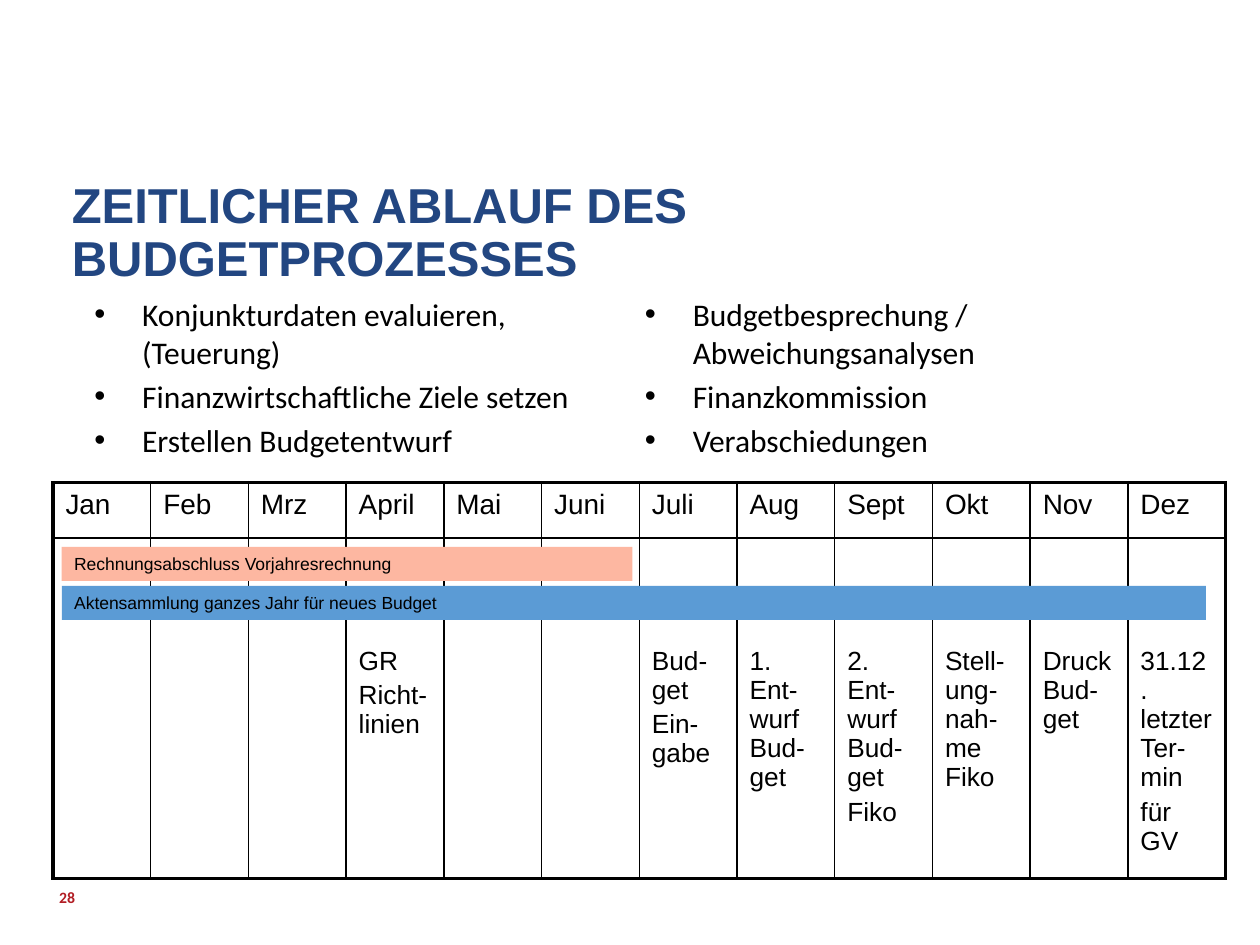
from pptx import Presentation
from pptx.dml.color import RGBColor
from pptx.enum.shapes import MSO_SHAPE
from pptx.enum.text import MSO_ANCHOR, MSO_AUTO_SIZE, PP_ALIGN
from pptx.oxml.ns import qn
from pptx.util import Inches, Pt
from lxml.etree import SubElement

THEME = {
    "heading_font": "Arial", "body_font": "Calibri",
    "title": "224681", "text": "000000", "number": "B21D24", "grid": "000000",
    "white": "FFFFFF", "closing": "FDB7A1", "collection": "5B9BD5",
    "title_size": 28, "bullet_size": 18, "month_size": 16, "task_size": 15,
    "bar_size": 10, "number_size": 9, "outer_line": 2.25, "inner_line": 1,
}
TITLE = "ZEITLICHER ABLAUF DES BUDGETPROZESSES"
PAGE_NUMBER = "28"
BULLET_COLUMNS = [
    (0.65, ["Konjunkturdaten evaluieren, (Teuerung)",
            "Finanzwirtschaftliche Ziele setzen",
            "Erstellen Budgetentwurf"]),
    (5.02, ["Budgetbesprechung / Abweichungsanalysen",
            "Finanzkommission",
            "Verabschiedungen"]),
]
MONTHS = [
    ("Jan", []), ("Feb", []), ("Mrz", []),
    ("April", ["GR", "Richt-linien"]),
    ("Mai", []), ("Juni", []),
    ("Juli", ["Bud-get", "Ein-gabe"]),
    ("Aug", ["1. Ent-wurf Bud-get"]),
    ("Sept", ["2. Ent-wurf Bud-get", "Fiko"]),
    ("Okt", ["Stell-ung-nah-me Fiko"]),
    ("Nov", ["Druck Bud-get"]),
    ("Dez", ["31.12. letzter Ter-min", "für GV"]),
]
BARS = [
    ("Aktensammlung ganzes Jahr für neues Budget", 4.65, 9.08, "collection"),
    ("Rechnungsabschluss Vorjahresrechnung", 4.34, 4.53, "closing"),
]
TABLE_LEFT, TABLE_TOP, TABLE_WIDTH = 0.42, 3.83, 9.31
ROW_HEIGHTS = [0.44, 2.63]
TASK_TOP_MARGIN = 0.86
FIRST_FILLED_COLUMN = 8


def color(name):
    return RGBColor.from_string(THEME[name])


def write(text_frame, lines, size, font="heading_font", ink="text", bold=False, bullets=False):
    text_frame.text = "\n".join(lines)
    for index, paragraph in enumerate(text_frame.paragraphs):
        paragraph.alignment = PP_ALIGN.LEFT
        if index:
            paragraph.space_before = Pt(THEME[size] * 0.2)
        if bullets:
            properties = paragraph._p.get_or_add_pPr()
            properties.set("marL", str(Inches(0.38)))
            properties.set("indent", str(-Inches(0.38)))
            SubElement(properties, qn("a:buFont")).set("typeface", "Arial")
            SubElement(properties, qn("a:buChar")).set("char", "•")
        for run in paragraph.runs:
            run.font.name = THEME[font]
            run.font.size = Pt(THEME[size])
            run.font.bold = bold
            run.font.color.rgb = color(ink)


def add_border(cell, side, width):
    line = SubElement(cell._tc.get_or_add_tcPr(), qn(f"a:ln{side}"), w=str(Pt(width)))
    fill = SubElement(line, qn("a:solidFill"))
    SubElement(fill, qn("a:srgbClr")).set("val", THEME["grid"])


def add_title(slide):
    title = slide.shapes.title
    title.left, title.top = Inches(0.47), Inches(1.39)
    title.width, title.height = Inches(9.17), Inches(0.94)
    frame = title.text_frame
    write(frame, [TITLE], "title_size", ink="title", bold=True)
    frame.paragraphs[0].line_spacing = 0.9
    frame.vertical_anchor = MSO_ANCHOR.MIDDLE
    frame.auto_size = MSO_AUTO_SIZE.NONE


def add_bullets(slide, left, lines):
    box = slide.shapes.add_textbox(Inches(left), Inches(2.29), Inches(4.46), Inches(1.46))
    box.text_frame.word_wrap = True
    write(box.text_frame, lines, "bullet_size", font="body_font", bullets=True)


def add_calendar(slide):
    last_row, last_column = len(ROW_HEIGHTS) - 1, len(MONTHS) - 1
    table = slide.shapes.add_table(
        len(ROW_HEIGHTS), len(MONTHS), Inches(TABLE_LEFT), Inches(TABLE_TOP),
        Inches(TABLE_WIDTH), Inches(sum(ROW_HEIGHTS))).table
    table.first_row = table.horz_banding = False
    for row, height in zip(table.rows, ROW_HEIGHTS):
        row.height = Inches(height)
    for column_index, (month, tasks) in enumerate(MONTHS):
        table.columns[column_index].width = Inches(TABLE_WIDTH / len(MONTHS))
        for row_index, lines in enumerate([[month], tasks]):
            cell = table.cell(row_index, column_index)
            edges = {"L": column_index == 0, "R": column_index == last_column,
                     "T": row_index == 0, "B": row_index == last_row}
            for side, is_outer in edges.items():
                add_border(cell, side, THEME["outer_line" if is_outer else "inner_line"])
            if column_index >= FIRST_FILLED_COLUMN:
                cell.fill.solid()
                cell.fill.fore_color.rgb = color("white")
            else:
                cell.fill.background()
            if lines:
                write(cell.text_frame, lines, "task_size" if row_index else "month_size")
            if row_index:
                cell.margin_top = Inches(TASK_TOP_MARGIN)


def add_bar(slide, label, top, width, fill):
    bar = slide.shapes.add_shape(
        MSO_SHAPE.RECTANGLE, Inches(0.49), Inches(top), Inches(width), Inches(0.27))
    bar.shadow.inherit = False
    bar.fill.solid()
    bar.fill.fore_color.rgb = color(fill)
    bar.line.fill.background()
    bar.text_frame.vertical_anchor = MSO_ANCHOR.MIDDLE
    write(bar.text_frame, [label], "bar_size")


def add_page_number(slide):
    box = slide.shapes.add_textbox(Inches(0.47), Inches(6.92), Inches(2.25), Inches(0.4))
    frame = box.text_frame
    frame.word_wrap = True
    frame.margin_left = frame.margin_right = frame.margin_top = frame.margin_bottom = 0
    frame.vertical_anchor = MSO_ANCHOR.MIDDLE
    write(frame, [PAGE_NUMBER], "number_size", font="body_font", ink="number", bold=True)


def main():
    presentation = Presentation()
    presentation.slide_width, presentation.slide_height = Inches(10), Inches(7.5)
    slide = presentation.slides.add_slide(presentation.slide_layouts[5])
    add_title(slide)
    add_page_number(slide)
    for left, lines in BULLET_COLUMNS:
        add_bullets(slide, left, lines)
    add_calendar(slide)
    for bar in BARS:
        add_bar(slide, *bar)
    presentation.save("out.pptx")


if __name__ == "__main__":
    main()
